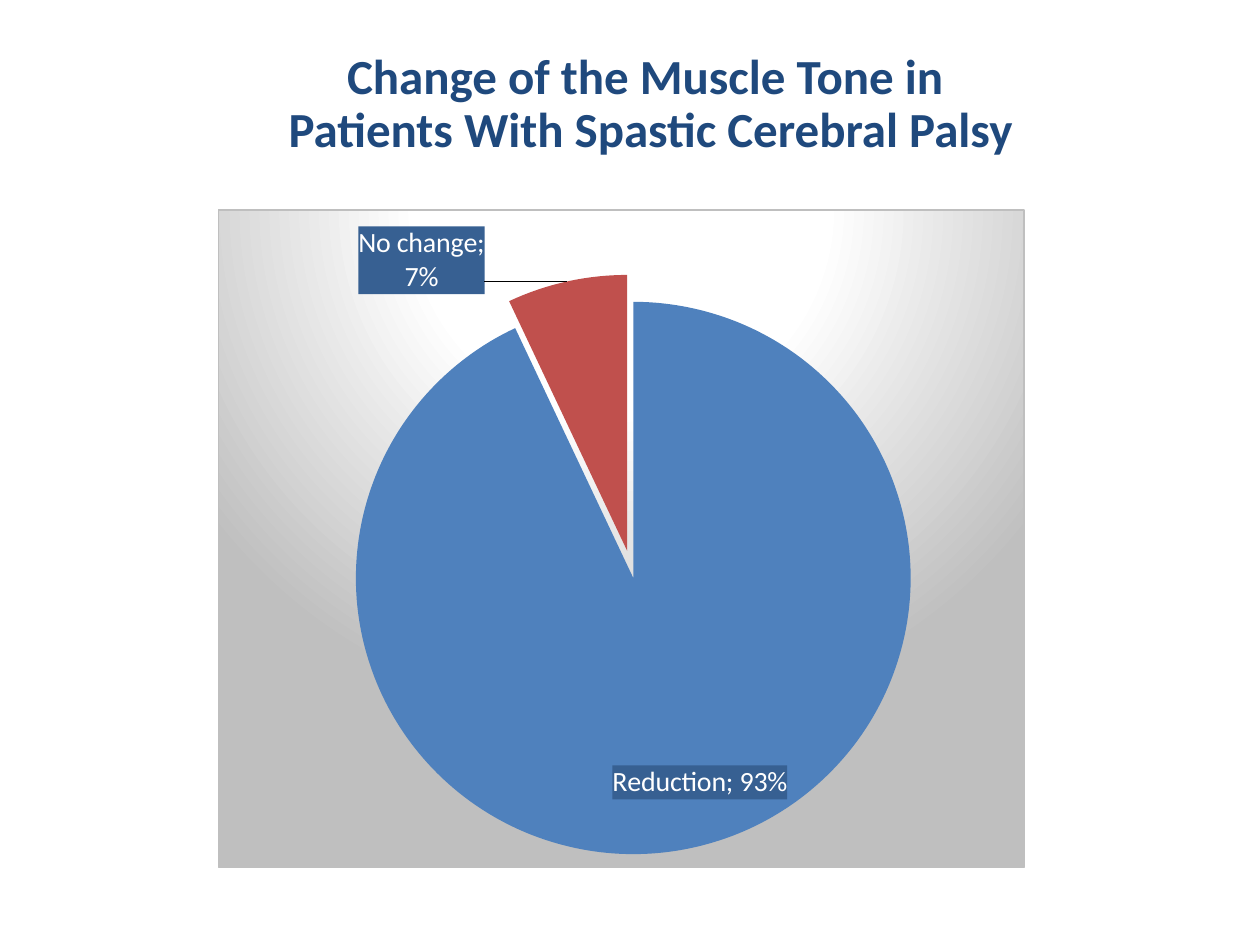
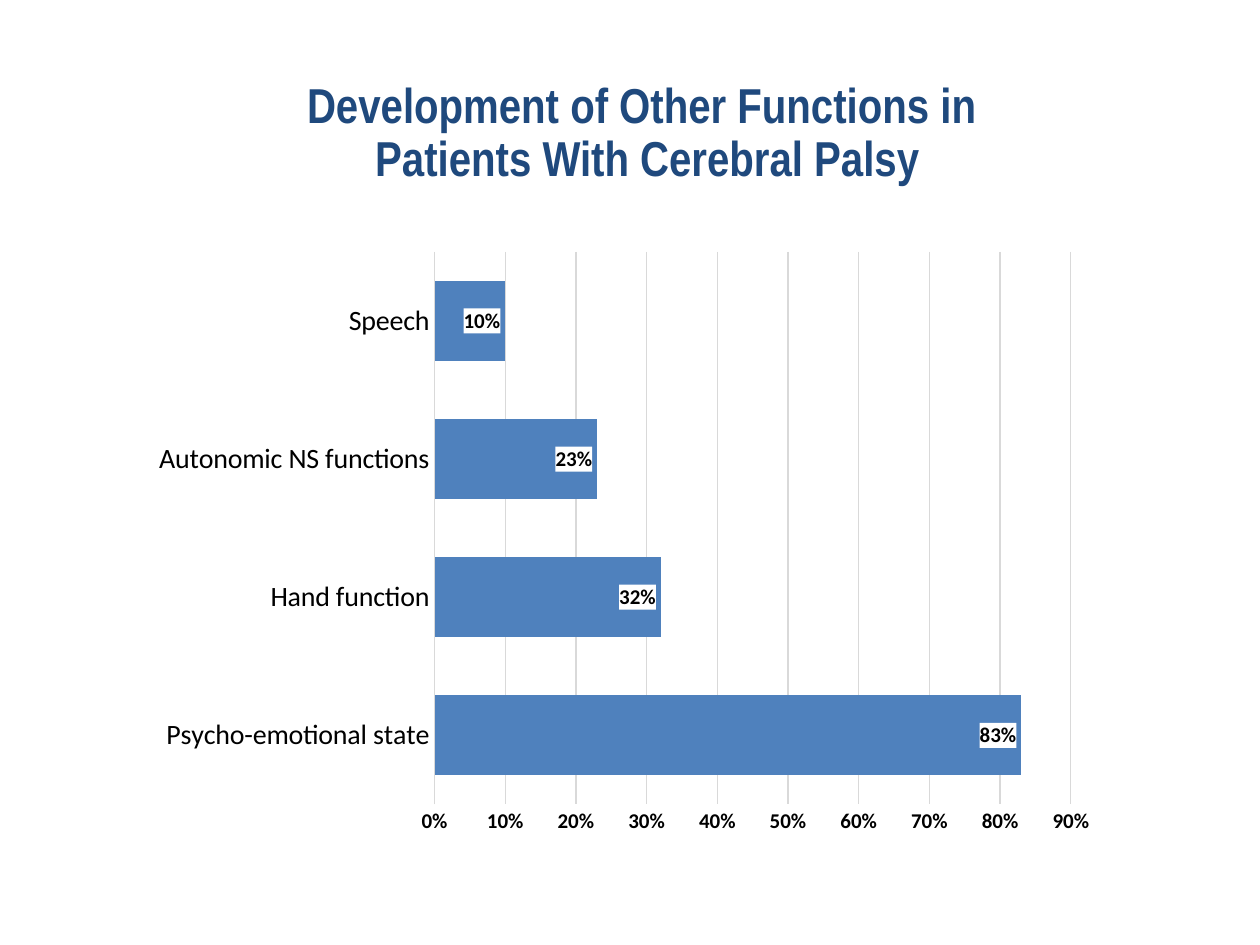
import pptx
import pptx.chart.data
import pptx.dml.color
import pptx.enum.chart
import pptx.enum.text
import pptx.oxml
import pptx.oxml.ns
import pptx.util

Pt = pptx.util.Pt
COLORS = {
    "title": "1F497D", "blue": "4F81BD", "red": "C0504D", "label": "376092",
    "white": "FFFFFF", "black": "000000", "grid": "D9D9D9", "backdrop": "BFBFBF",
}
RGB = {name: pptx.dml.color.RGBColor.from_string(value) for name, value in COLORS.items()}
NAMESPACES = pptx.oxml.ns.nsdecls("c", "a")


def chart_layout(placement, target=""):
    inner = "".join(f'<c:{key} val="{value}"/>' for key, value in placement.items())
    return pptx.oxml.parse_xml(
        f"<c:layout {NAMESPACES}><c:manualLayout>{target}{inner}</c:manualLayout></c:layout>")


def solid_box(color):
    return pptx.oxml.parse_xml(
        f'<c:spPr {NAMESPACES}><a:solidFill><a:srgbClr val="{COLORS[color]}"/></a:solidFill>'
        "<a:ln><a:noFill/></a:ln></c:spPr>")


prs = pptx.Presentation()
prs.slide_width, prs.slide_height = Pt(720), Pt(540)

topics = [
    {
        "title": "Change of the Muscle Tone in \nPatients With Spastic Cerebral Palsy",
        "font": "Calibri",
        "title_box": (124.5, 26, 494.5, 121),
        "chart_type": pptx.enum.chart.XL_CHART_TYPE.PIE,
        "chart_box": (124.5, 118, 461, 378),
        "plot": {"x": 0.17, "y": 0.14, "w": 0.69, "h": 0.84},
        "values": {"Reduction": 0.93, "No change": 0.07},
    },
    {
        "title": "Development of Other Functions in \nPatients With Cerebral Palsy",
        "font": "Arial Narrow",
        "title_box": (122.5, 43, 494.5, 111),
        "chart_type": pptx.enum.chart.XL_CHART_TYPE.BAR_CLUSTERED,
        "chart_box": (83, 137, 551, 347),
        "plot": {"x": 0.3, "y": 0.02, "w": 0.66, "h": 0.91},
        "values": {"Psycho-emotional state": 0.83, "Hand function": 0.32,
                   "Autonomic NS functions": 0.23, "Speech": 0.1},
    },
]

charts = []
for topic in topics:
    slide = prs.slides.add_slide(prs.slide_layouts[5])
    title = slide.shapes.title
    title.left, title.top, title.width, title.height = map(Pt, topic["title_box"])
    title.text_frame.text = topic["title"]
    title.text_frame.word_wrap = True
    title.text_frame.auto_size = pptx.enum.text.MSO_AUTO_SIZE.NONE
    title.text_frame.vertical_anchor = pptx.enum.text.MSO_ANCHOR.TOP
    for line in title.text_frame.paragraphs:
        line.alignment = pptx.enum.text.PP_ALIGN.CENTER
        line.line_spacing = 0.9
        line.space_before = Pt(0)
        line.font.name = topic["font"]
        line.font.size = Pt(28)
        line.font.bold = True
        line.font.color.rgb = RGB["title"]

    data = pptx.chart.data.CategoryChartData(number_format="0%")
    data.categories = list(topic["values"])
    data.add_series("Series 1", list(topic["values"].values()))
    chart = slide.shapes.add_chart(
        topic["chart_type"], *map(Pt, topic["chart_box"]), data).chart
    chart.has_title = False
    chart.has_legend = False
    chart.font.name = "Calibri"
    chart.font.size = Pt(10)
    chart.font.color.rgb = RGB["black"]
    plot_area = chart.element.xpath(".//c:plotArea")[0]
    for old_layout in plot_area.xpath("./c:layout"):
        plot_area.remove(old_layout)
    plot_area.insert(0, chart_layout(
        {"xMode": "edge", "yMode": "edge", **topic["plot"]}, '<c:layoutTarget val="inner"/>'))
    charts.append(chart)

tone, functions = charts

tone.element.xpath("./c:chart")[0].addnext(pptx.oxml.parse_xml(
    f'<c:spPr {NAMESPACES}><a:gradFill><a:gsLst>'
    f'<a:gs pos="0"><a:srgbClr val="{COLORS["white"]}"/></a:gs>'
    f'<a:gs pos="39000"><a:srgbClr val="{COLORS["white"]}"/></a:gs>'
    f'<a:gs pos="100000"><a:srgbClr val="{COLORS["backdrop"]}"/></a:gs></a:gsLst>'
    '<a:path path="circle"><a:fillToRect l="50000" t="-80000" r="50000" b="180000"/></a:path>'
    f'</a:gradFill><a:ln w="9525"><a:solidFill><a:srgbClr val="{COLORS["backdrop"]}"/>'
    "</a:solidFill></a:ln></c:spPr>"))
tone.plots[0].vary_by_categories = True
tone_series = tone.plots[0].series[0]
tone_series.data_labels.show_value = True
for index, (outcome, share) in enumerate(topics[0]["values"].items()):
    point = tone_series.points[index]
    point.format.fill.solid()
    point.format.fill.fore_color.rgb = RGB[("blue", "red")[index]]
    point.format.line.fill.background()
    label = point.data_label
    label.position = pptx.enum.chart.XL_LABEL_POSITION.BEST_FIT
    label.text_frame.text = f"{outcome}; {share:.0%}"
    label_font = label.text_frame.paragraphs[0].runs[0].font
    label_font.name = "Calibri"
    label_font.size = Pt(16)
    label_font.bold = False
    label_font.color.rgb = RGB["white"]
for label_text in tone.element.xpath(".//c:dLbl/c:tx"):
    label_text.addnext(solid_box("label"))
tone.element.xpath(".//c:dLbl[c:idx/@val='1']/c:idx")[0].addnext(
    chart_layout({"x": -0.1, "y": 0.03}))
tone.element.xpath(".//c:dPt[c:idx/@val='1']/c:spPr")[0].addprevious(
    pptx.oxml.parse_xml(f'<c:explosion {NAMESPACES} val="10"/>'))

bars = functions.plots[0]
bars.gap_width = 73
bars.vary_by_categories = False
bars.series[0].format.fill.solid()
bars.series[0].format.fill.fore_color.rgb = RGB["blue"]
bar_labels = bars.series[0].data_labels
bar_labels.show_value = True
bar_labels.number_format = "0%"
bar_labels.number_format_is_linked = False
bar_labels.position = pptx.enum.chart.XL_LABEL_POSITION.INSIDE_END

function_axis = functions.category_axis
function_axis.format.line.color.rgb = RGB["grid"]
function_axis.format.line.width = Pt(0.75)
share_axis = functions.value_axis
share_axis.minimum_scale, share_axis.maximum_scale, share_axis.major_unit = 0, 0.9, 0.1
share_axis.tick_labels.number_format = "0%"
share_axis.tick_labels.number_format_is_linked = False
share_axis.format.line.fill.background()
share_axis.has_major_gridlines = True
share_axis.major_gridlines.format.line.color.rgb = RGB["grid"]
share_axis.major_gridlines.format.line.width = Pt(0.75)
for axis in (function_axis, share_axis):
    axis.major_tick_mark = pptx.enum.chart.XL_TICK_MARK.NONE
    axis.minor_tick_mark = pptx.enum.chart.XL_TICK_MARK.NONE
for font, size, bold in (
    (function_axis.tick_labels.font, 16, False),
    (share_axis.tick_labels.font, 12, True),
    (bar_labels.font, 12, True),
):
    font.name = "Calibri"
    font.size = Pt(size)
    font.bold = bold
    font.color.rgb = RGB["black"]
functions.element.xpath(".//c:ser/c:dLbls/c:txPr")[0].addprevious(solid_box("white"))

prs.save("out.pptx")
